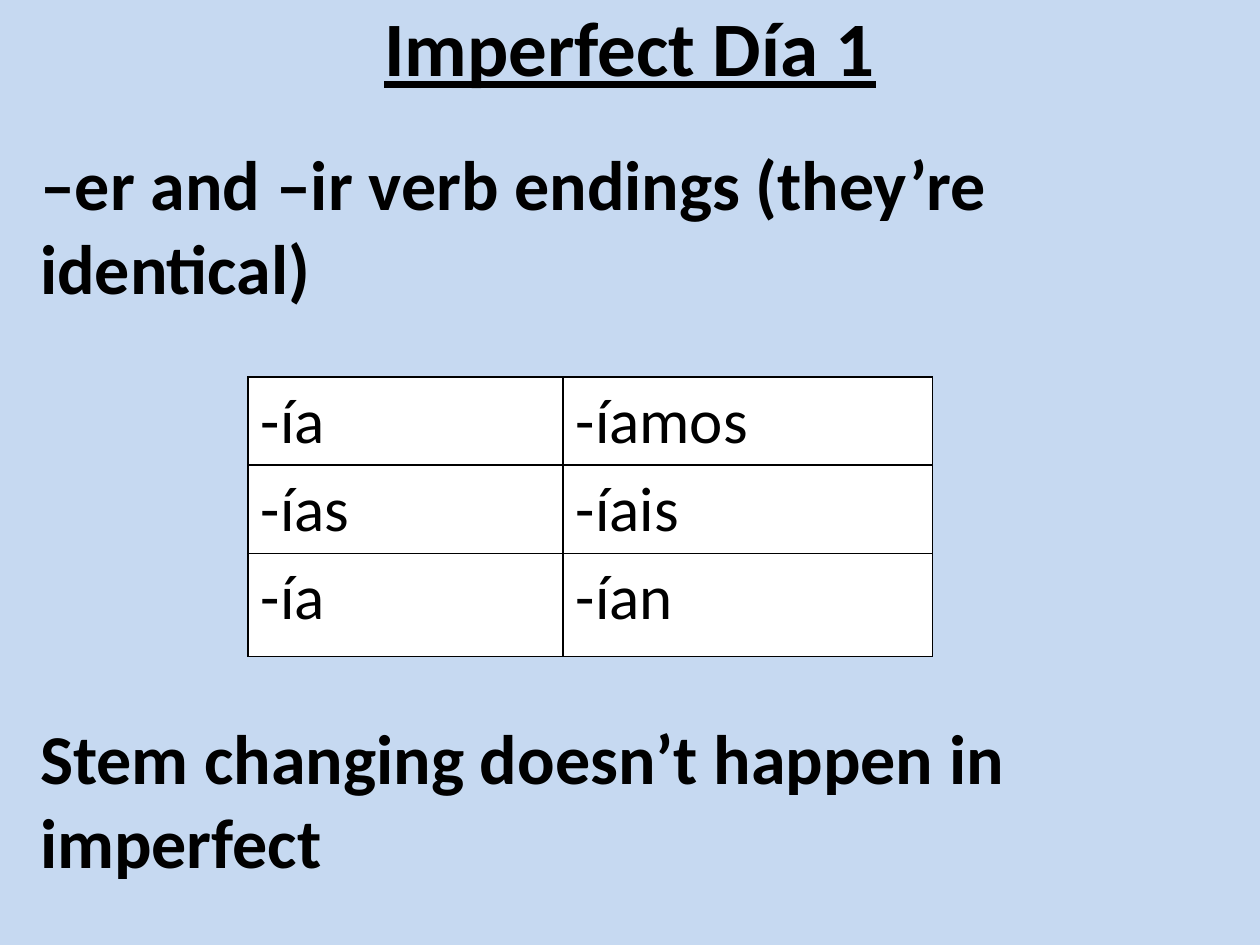
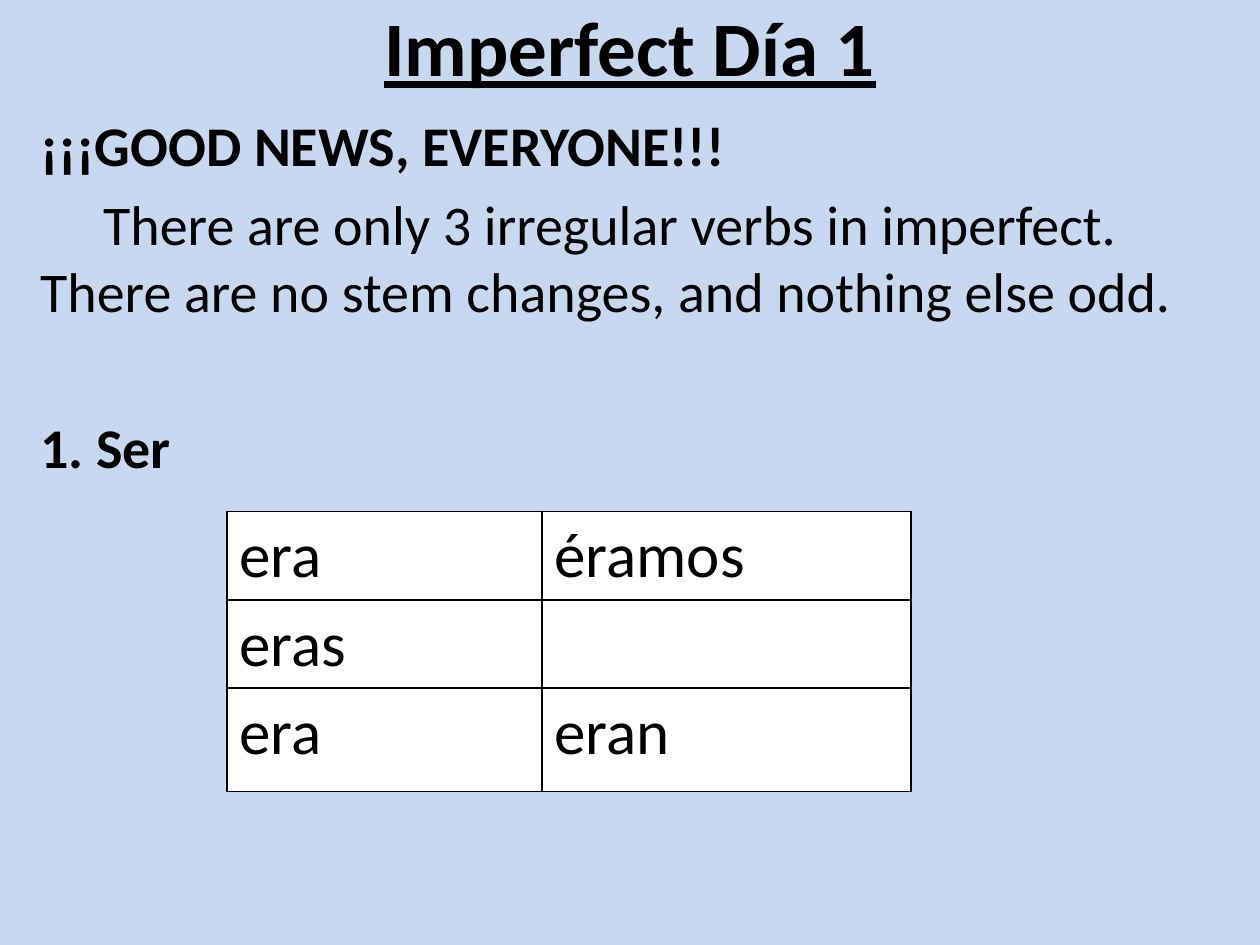
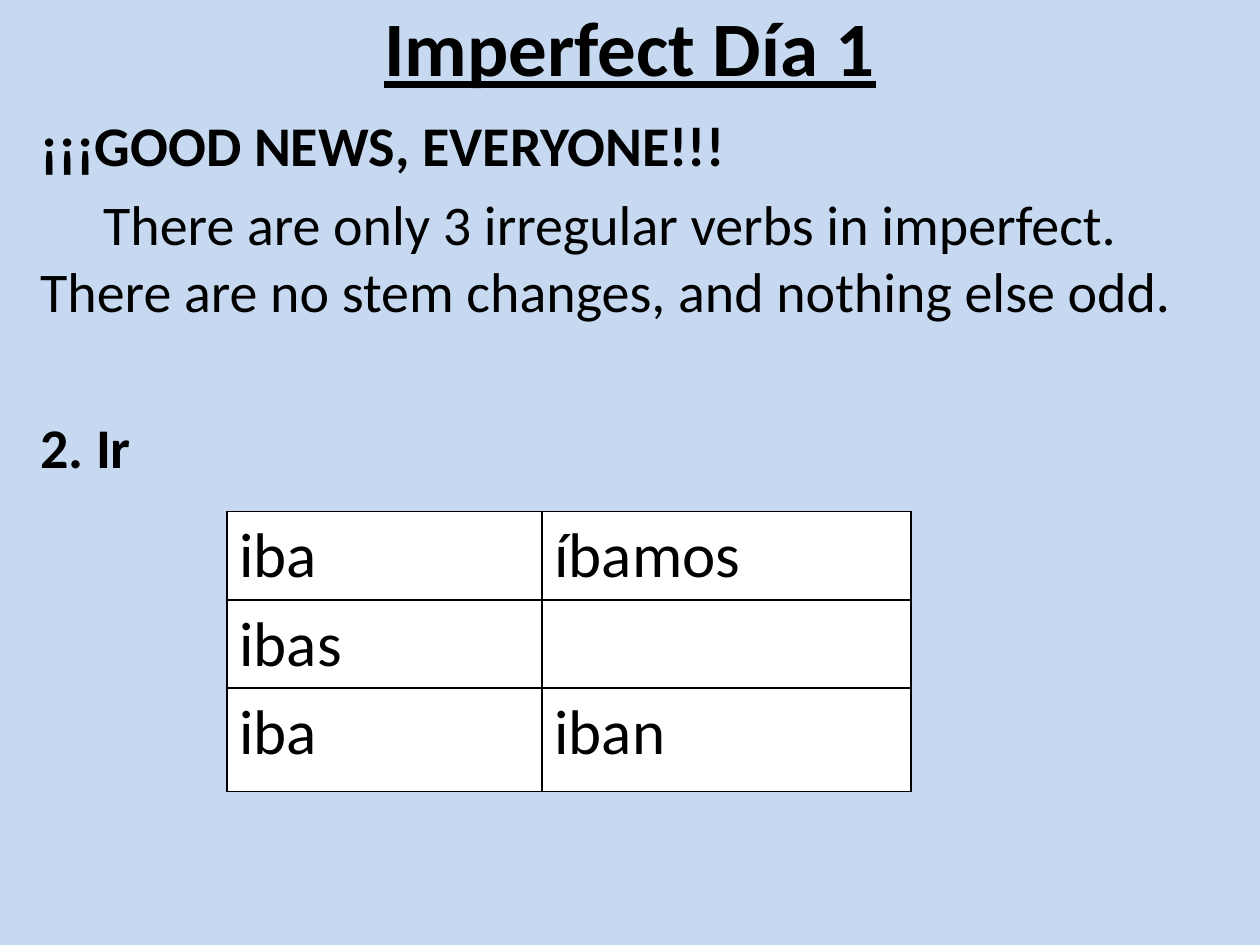
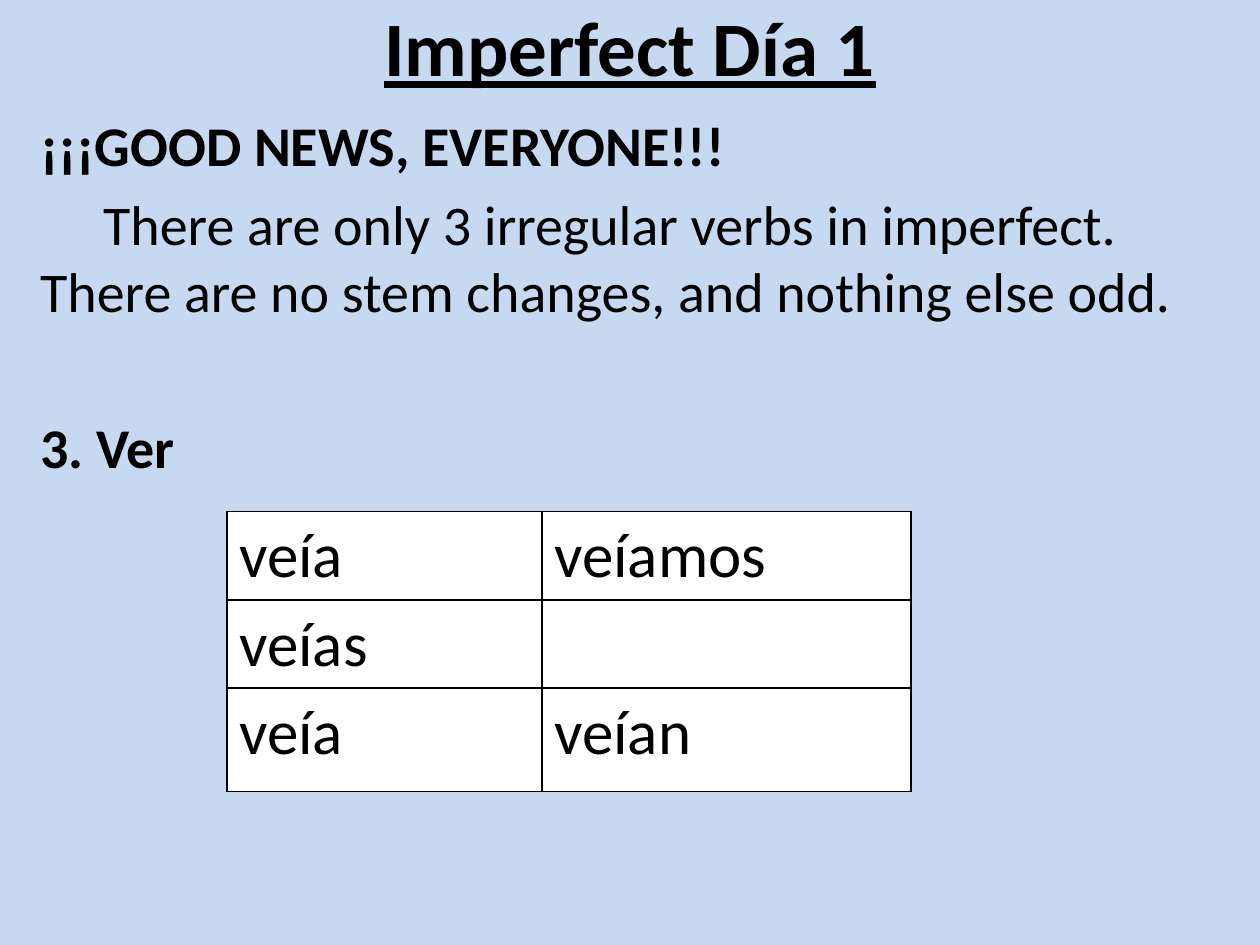
from lxml import etree
from pptx import Presentation
from pptx.dml.color import RGBColor
from pptx.enum import text
from pptx.oxml import ns
from pptx.util import Inches, Pt

# Content
TITLE = "Imperfect Día 1"
NEWS = "¡¡¡GOOD NEWS, EVERYONE!!!"
NEWS_DETAIL = ("There are only 3 irregular verbs in imperfect.  "
               "There are no stem changes, and nothing else odd.")
ENDINGS_INTRO = "–er and –ir verb endings (they’re identical)"
ENDINGS_NOTE = "Stem changing doesn’t happen in imperfect"
ENDINGS = [("-ía", "-íamos"), ("-ías", "-íais"), ("-ía", "-ían")]
IRREGULAR_VERBS = [
    ("1. Ser", [("era", "éramos"), ("eras", ""), ("era", "eran")]),
    ("2. Ir", [("iba", "íbamos"), ("ibas", ""), ("iba", "iban")]),
    ("3. Ver", [("veía", "veíamos"), ("veías", ""), ("veía", "veían")]),
]

# Shared style
FONT = "Calibri"
BLACK, WHITE, PALE_BLUE = "000000", "FFFFFF", "C6D9F1"
TITLE_SIZE, ENDINGS_SIZE, NEWS_SIZE, CELL_SIZE = 44, 40, 32, 36
COLUMN_WIDTHS = (2.5, 2.93)
ROW_HEIGHTS = (0.7, 0.7, 0.82)
BODY_LEFT, BODY_WIDTH = 0.22, 9.78


def color(value):
    return RGBColor.from_string(value)


def style(para, size, bold=False, underline=False):
    for span in para.runs:
        span.font.name = FONT
        span.font.size = Pt(size)
        span.font.bold = bold
        span.font.underline = underline
        span.font.color.rgb = color(BLACK)


def add_text_box(page, left, top, width, height):
    box = page.shapes.add_textbox(*map(Inches, (left, top, width, height)))
    box.text_frame.word_wrap = True
    return box.text_frame


def add_title(page):
    frame = add_text_box(page, 0, -0.31, 10, 1.35)
    frame.vertical_anchor = text.MSO_ANCHOR.MIDDLE
    frame.text = TITLE
    para = frame.paragraphs[0]
    para.alignment = text.PP_ALIGN.CENTER
    style(para, TITLE_SIZE, bold=True, underline=True)


def add_body(page, top, height, size, lines):
    """Each line is (wording, bold, points before, first-line indent)."""
    frame = add_text_box(page, BODY_LEFT, top, BODY_WIDTH, height)
    frame.text = "\n".join(line[0] for line in lines)
    for para, (_, bold, before, indent) in zip(frame.paragraphs, lines):
        para.space_before = Pt(before)
        if indent:
            para._p.get_or_add_pPr().set("indent", str(Inches(indent)))
        style(para, size, bold)


def add_borders(cell):
    properties = cell._tc.get_or_add_tcPr()
    for index, side in enumerate(("lnL", "lnR", "lnT", "lnB")):
        line = etree.Element(ns.qn(f"a:{side}"), w=str(Pt(1)))
        fill = etree.SubElement(line, ns.qn("a:solidFill"))
        etree.SubElement(fill, ns.qn("a:srgbClr"), val=BLACK)
        properties.insert(index, line)


def add_verb_table(page, left, top, rows):
    table = page.shapes.add_table(
        len(rows), len(COLUMN_WIDTHS), Inches(left), Inches(top),
        Inches(sum(COLUMN_WIDTHS)), Inches(sum(ROW_HEIGHTS))).table
    table.first_row = table.horz_banding = False
    for column, width in zip(table.columns, COLUMN_WIDTHS):
        column.width = Inches(width)
    for row, height, forms in zip(table.rows, ROW_HEIGHTS, rows):
        row.height = Inches(height)
        for cell, form in zip(row.cells, forms):
            if form:
                cell.text = form
                style(cell.text_frame.paragraphs[0], CELL_SIZE)
            cell.fill.solid()
            cell.fill.fore_color.rgb = color(WHITE)
            add_borders(cell)


def add_page(deck):
    page = deck.slides.add_slide(deck.slide_layouts[6])
    page.background.fill.solid()
    page.background.fill.fore_color.rgb = color(PALE_BLUE)
    add_title(page)
    return page


def main():
    deck = Presentation()
    deck.slide_width, deck.slide_height = Inches(10), Inches(7.5)

    # Regular endings
    page = add_page(deck)
    add_body(page, 1.07, 6.43, ENDINGS_SIZE, [
        (ENDINGS_INTRO, True, 0, 0),
        (ENDINGS_NOTE, True, 232, 0),
    ])
    add_verb_table(page, 1.97, 2.99, ENDINGS)

    # One page for each irregular verb
    for verb, forms in IRREGULAR_VERBS:
        page = add_page(deck)
        add_body(page, 0.83, 3.17, NEWS_SIZE, [
            (NEWS, True, 0, 0),
            (NEWS_DETAIL, False, 6.4, 0.5),
            (verb, True, 51, 0),
        ])
        add_verb_table(page, 1.8, 4.06, forms)

    deck.save("out.pptx")


if __name__ == "__main__":
    main()
